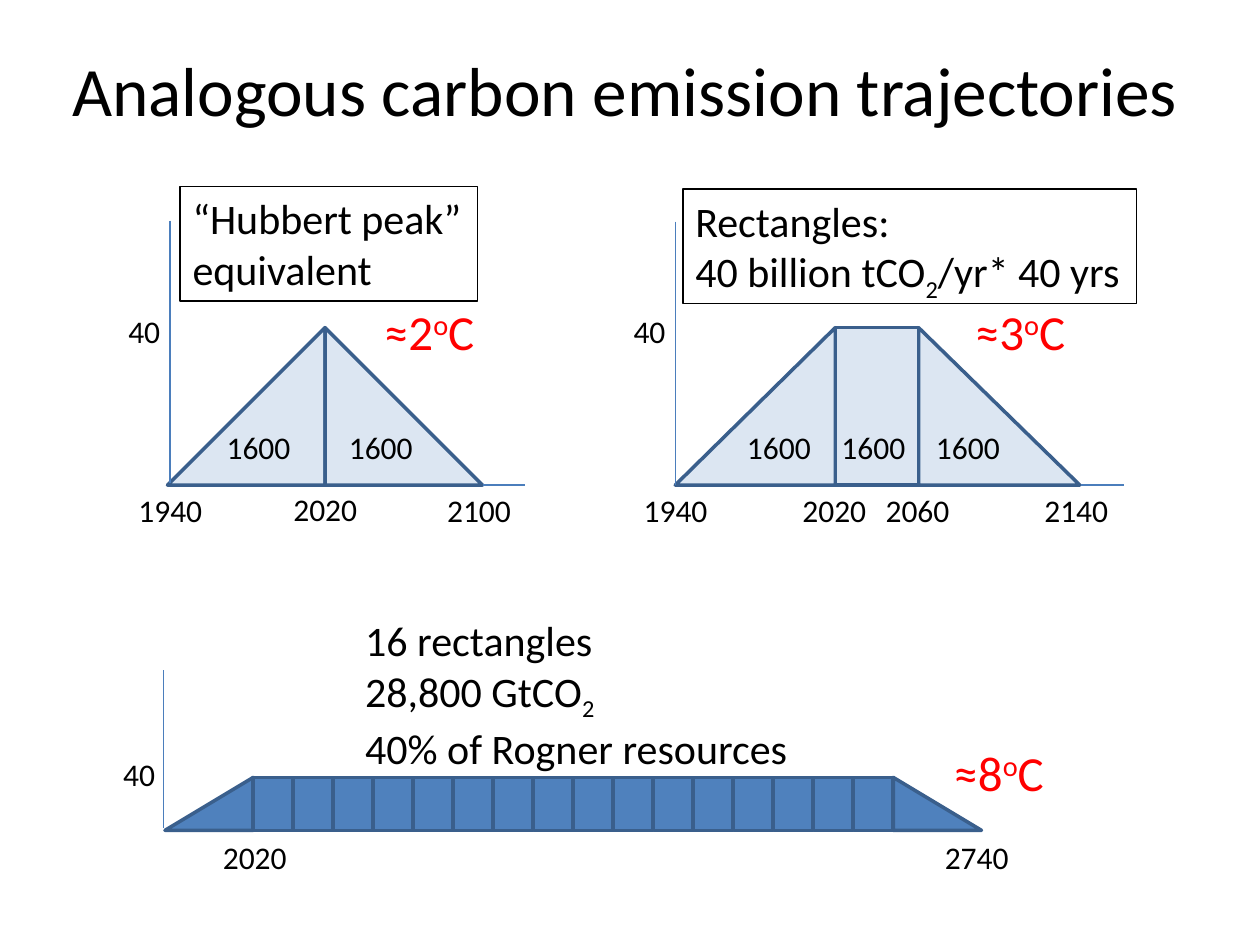
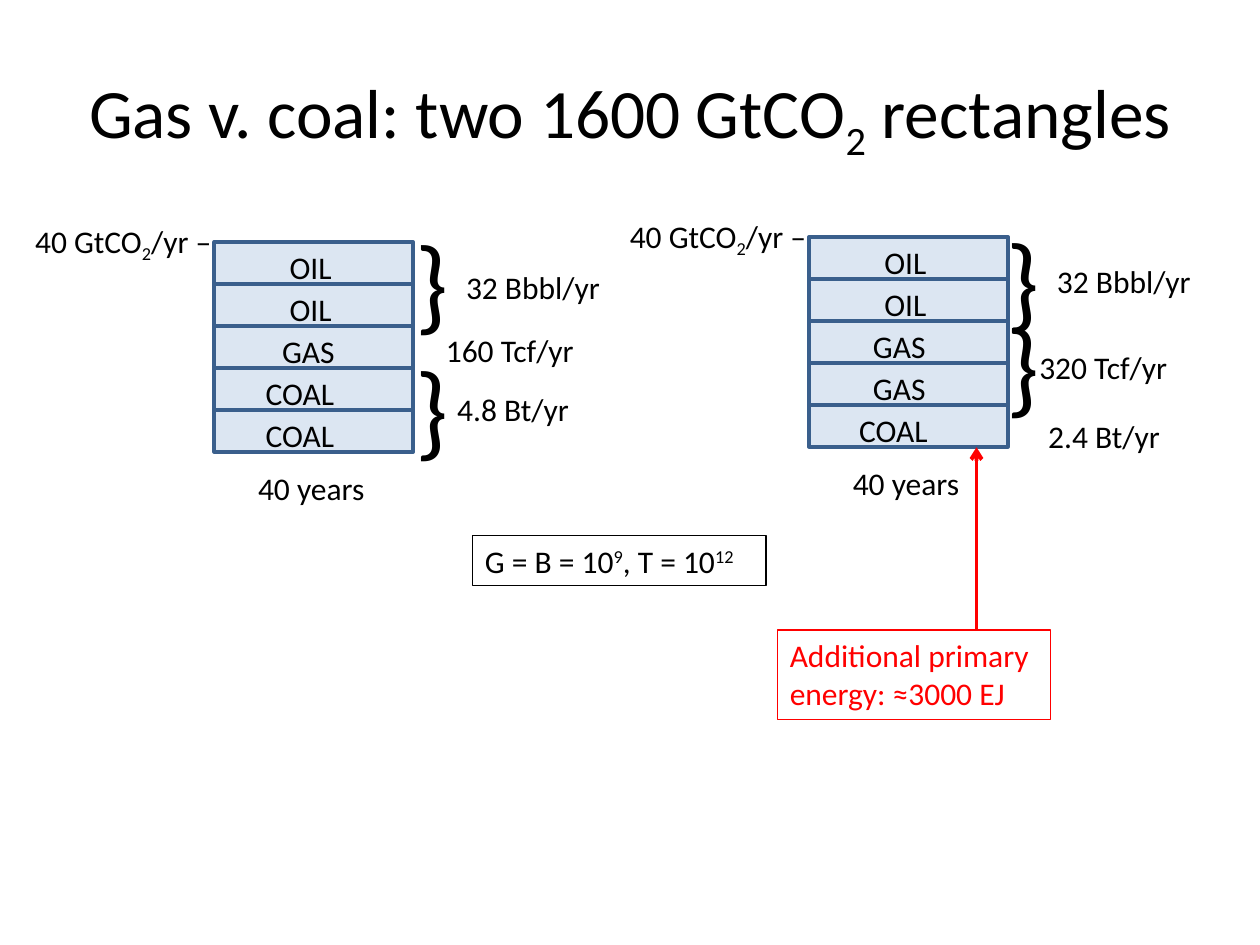
"""Build two slides on carbon emission trajectories and fossil fuel mixes."""
from lxml import etree
from pptx import Presentation
from pptx.dml.color import RGBColor
from pptx.enum.shapes import MSO_CONNECTOR, MSO_SHAPE
from pptx.enum.text import MSO_ANCHOR, PP_ALIGN
from pptx.oxml.ns import qn
from pptx.util import Inches, Pt

RECT, TRIANGLE = MSO_SHAPE.RECTANGLE, MSO_SHAPE.RIGHT_TRIANGLE
STRAIGHT = MSO_CONNECTOR.STRAIGHT
MIDDLE, CENTER, LEFT = MSO_ANCHOR.MIDDLE, PP_ALIGN.CENTER, PP_ALIGN.LEFT

FONT = "Calibri"
BLACK, RED = "000000", "FF0000"
PALE, BLUE, EDGE, AXIS = "DCE6F2", "4F81BD", "3A5F8C", "4B7EBC"
BASELINES = {"_": "-25000", "^": "30000"}

TITLES = [
    ("Analogous carbon emission trajectories", (0.17, 0.08, 9.58, 1.25)),
    ("Gas v. coal: two 1600 GtCO|_2| rectangles", (0.5, 0.3, 9, 1.25)),
]

TRAJECTORIES = [
    {
        "corners": (1.31, 2.01, 7.09, 7.79), "top": 6.17, "height": 0.42,
        "bars": 16, "fill": BLUE,
        "axes": [(1.3, 5.32, 1.3, 6.57)],
        "labels": [("40", 0.88, 5.94), ("2740", 7.4, 6.6), ("2020", 1.67, 6.6)],
        "warming": ("≈8|^o|C", 7.47, 5.84),
        "caption": (["16 rectangles", "28,800 GtCO|_2", "40% of Rogner resources"],
                    (2.8, 4.83, 3.58, 1.31), None),
    },
    {
        "corners": (1.33, 2.58, 2.58, 3.83), "top": 2.6, "height": 1.25,
        "bars": 0, "fill": PALE,
        "axes": [(1.35, 1.75, 1.35, 3.83), (3.83, 3.85, 4.17, 3.85)],
        "labels": [("1600", 1.7, 3.35), ("1600", 2.67, 3.35), ("40", 0.92, 2.43),
                   ("1940", 1, 3.85), ("2020", 2.23, 3.84), ("2100", 3.45, 3.85)],
        "warming": ("≈2|^o|C", 2.95, 2.34),
        "caption": (["“Hubbert peak”", "equivalent"], (1.43, 1.48, 2.36, 0.91), BLACK),
    },
    {
        "corners": (5.36, 6.63, 7.29, 8.57), "top": 2.6, "height": 1.25,
        "bars": 1, "fill": PALE,
        "axes": [(5.36, 1.76, 5.36, 3.85), (8.58, 3.85, 8.92, 3.85)],
        "labels": [("1600", 5.83, 3.35), ("1600", 6.58, 3.35), ("1600", 7.33, 3.35),
                   ("40", 4.93, 2.43), ("1940", 5.01, 3.85), ("2020", 6.27, 3.85),
                   ("2060", 6.93, 3.85), ("2140", 8.19, 3.85)],
        "warming": ("≈3|^o|C", 7.64, 2.34),
        "caption": (["Rectangles:", "40 billion tCO|_2|/yr* 40 yrs"],
                    (5.42, 1.5, 3.6, 0.91), BLACK),
    },
]

STACKS = [
    {
        "left": 1.7, "top": 1.92,
        "fuels": ["OIL", "OIL", "GAS", "COAL", "COAL"],
        "fuel_x": {"OIL": 2.2, "GAS": 2.14, "COAL": 2.01},
        "braces": [(3.2, 1.67), (3.2, 2.67)],
        "rates": [("32 Bbbl/yr", 3.6, 2.08), ("160 Tcf/yr", 3.44, 2.58),
                  ("4.8 Bt/yr", 3.53, 3.05)],
    },
    {
        "left": 6.42, "top": 1.88,
        "fuels": ["OIL", "OIL", "GAS", "GAS", "COAL"],
        "fuel_x": {"OIL": 6.92, "GAS": 6.83, "COAL": 6.72},
        "braces": [(7.89, 1.65), (7.89, 2.33)],
        "rates": [("32 Bbbl/yr", 8.29, 2.03), ("320 Tcf/yr", 8.15, 2.71),
                  ("2.4 Bt/yr", 8.22, 3.26)],
    },
]
LAYER_W, LAYER_H = 1.58, 1 / 3

NOTES = [
    ("G = B = 10|^9|, T = 10|^12", (3.75, 4.25, 2.33, 0.4), BLACK, BLACK),
    ("Additional primary energy: ≈3000 EJ", (6.17, 5, 2.17, 0.71), RED, RED),
]
ARROW = (7.75, 5, 7.75, 3.55)


def rgb(value):
    return RGBColor.from_string(value)


def set_line(s, color, width):
    s.line.color.rgb = rgb(color)
    s.line.width = Pt(width)


def add_text(slide, lines, at, size=18, color=BLACK, border=None,
             wrap=False, align=LEFT, anchor=None):
    s = slide.shapes.add_textbox(*map(Inches, at))
    tf = s.text_frame
    tf.word_wrap = wrap
    if anchor:
        tf.vertical_anchor = anchor
    if border:
        set_line(s, border, 0.75)
    for i, line in enumerate(lines):
        p = tf.add_paragraph() if i else tf.paragraphs[0]
        p.alignment = align
        for part in line.split("|"):
            r = p.add_run()
            baseline = BASELINES.get(part[0])
            r.text = part[1:] if baseline else part
            for name, value in {"name": FONT, "size": Pt(size)}.items():
                setattr(r.font, name, value)
            r.font.color.rgb = rgb(color)
            if baseline:
                r.font._element.set("baseline", baseline)


def add_block(slide, kind, at, fill, flip=False):
    s = slide.shapes.add_shape(kind, *map(Inches, at))
    s.shadow.inherit = False
    s.fill.solid()
    s.fill.fore_color.rgb = rgb(fill)
    set_line(s, EDGE, 2)
    if flip:
        s._element.spPr.xfrm.set("flipH", "1")


def add_line(slide, ends, color, width, arrow=False):
    s = slide.shapes.add_connector(STRAIGHT, *map(Inches, ends))
    set_line(s, color, width)
    if arrow:
        etree.SubElement(s.line._get_or_add_ln(), qn("a:tailEnd"), type="arrow")
    etree.SubElement(s._element.spPr, qn("a:effectLst"))


def draw_trajectory(slide, t):
    start, rise_end, fall_start, end = t["corners"]
    top, height, bars, fill = t["top"], t["height"], t["bars"], t["fill"]
    add_block(slide, TRIANGLE, (start, top, rise_end - start, height), fill, flip=True)
    add_block(slide, TRIANGLE, (fall_start, top, end - fall_start, height), fill)
    for i in range(bars):
        width = (fall_start - rise_end) / bars
        add_block(slide, RECT, (rise_end + i * width, top, width, height), fill)
    for axis in t["axes"]:
        add_line(slide, axis, AXIS, 0.75)
    for label, x, y in t["labels"]:
        add_text(slide, [label], (x, y, 0.71 if len(label) == 4 else 0.46, 0.4))
    label, x, y = t["warming"]
    add_text(slide, [label], (x, y, 0.95, 0.57), size=28, color=RED)
    lines, at, border = t["caption"]
    add_text(slide, lines, at, size=24, border=border)


def draw_stack(slide, stack):
    left, top = stack["left"], stack["top"]
    rows = [(fuel, top + i * LAYER_H) for i, fuel in enumerate(stack["fuels"])]
    for fuel, y in rows:
        add_block(slide, RECT, (left, y, LAYER_W, LAYER_H), PALE)
    for fuel, y in rows:
        add_text(slide, [fuel], (stack["fuel_x"][fuel], y, 0.92, 0.4), wrap=True)
    add_text(slide, ["40 years"], (left + 0.25, top + 1.75, 1.17, 0.4), wrap=True)
    add_text(slide, ["40 GtCO|_2|/yr –"], (left - 1.52, top - 0.21, 1.75, 0.4), wrap=True)
    for x, y in stack["braces"]:
        add_text(slide, ["}"], (x, y, 0.47, 1.11), size=60)
    for rate, x, y in stack["rates"]:
        add_text(slide, [rate], (x, y, 1.42, 0.4), wrap=True)


def main():
    prs = Presentation()
    prs.slide_width, prs.slide_height = Inches(10), Inches(7.5)
    slides = []
    for title, at in TITLES:
        slide = prs.slides.add_slide(prs.slide_layouts[6])
        add_text(slide, [title], at, size=39.6, wrap=True, align=CENTER, anchor=MIDDLE)
        slides.append(slide)
    trajectories, fuels = slides
    for t in TRAJECTORIES:
        draw_trajectory(trajectories, t)
    for stack in STACKS:
        draw_stack(fuels, stack)
    for note, at, color, border in NOTES:
        add_text(fuels, [note], at, color=color, border=border, wrap=True)
    add_line(fuels, ARROW, RED, 2.25, arrow=True)
    prs.save("out.pptx")


if __name__ == "__main__":
    main()
